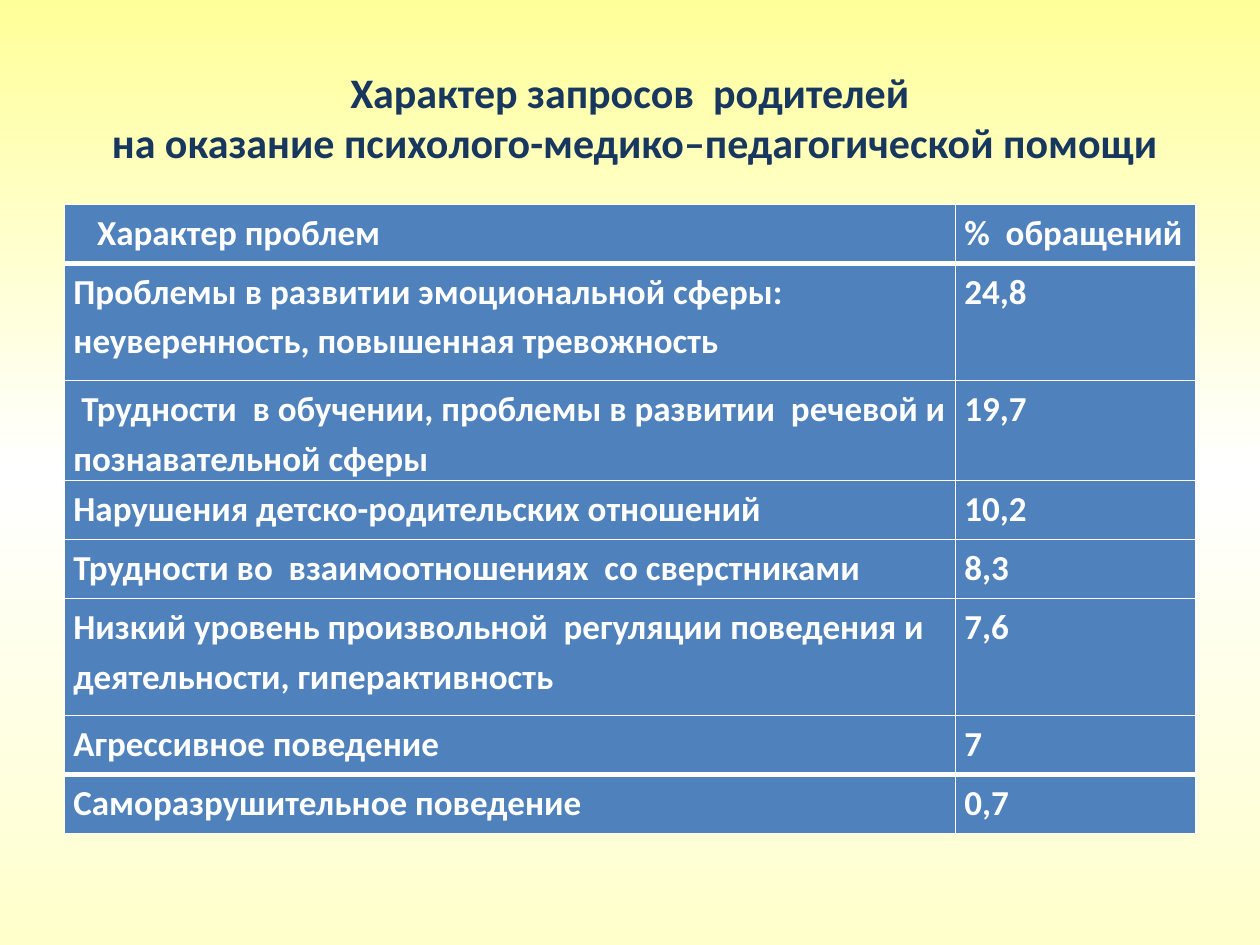
import copy
import lxml.etree
import pptx
import pptx.dml.color
import pptx.enum.text
import pptx.oxml.ns
import pptx.util

Cm, Pt = pptx.util.Cm, pptx.util.Pt
qn = pptx.oxml.ns.qn

HEADING = "Характер запросов  родителей\v на оказание психолого-медико–педагогической помощи"
COLUMNS = ("Характер проблем", "%  обращений")
REQUESTS = [
    ("Проблемы в развитии эмоциональной сферы: неуверенность, повышенная тревожность", "24,8"),
    (" Трудности  в обучении, проблемы в развитии  речевой и познавательной сферы", "19,7"),
    ("Нарушения детско-родительских отношений", "10,2"),
    ("Трудности во  взаимоотношениях  со сверстниками", "8,3"),
    ("Низкий уровень произвольной  регуляции поведения и  деятельности, гиперактивность", "7,6"),
    ("Агрессивное поведение", "7"),
    ("Саморазрушительное поведение", "0,7"),
]
TALL_ROWS = (1, 5)

THEME = {
    "font": "Calibri",
    "heading": "17375E",
    "cell": "4F81BD",
    "light": "FFFFFF",
    "backdrop": [(0, "FFFF99"), (0.5, "FFFFFF"), (1, "FFFFCC")],
    "heading_size": 24,
    "cell_size": 20,
    "thin": 1,
    "thick": 3,
}


def rgb(value):
    return pptx.dml.color.RGBColor.from_string(value)


def write_text(frame, text, size, color, align=None, spacing=None, before=None, indent=None):
    frame.word_wrap = True
    frame.text = text
    paragraph = frame.paragraphs[0]
    paragraph.alignment = align
    paragraph.line_spacing = spacing
    paragraph.space_before = before
    if indent is not None:
        paragraph._p.get_or_add_pPr().set("indent", str(indent))
    for run in paragraph.runs:
        run.font.name = THEME["font"]
        run.font.size = Pt(size)
        run.font.bold = True
        run.font.color.rgb = rgb(color)


def paint_backdrop(slide):
    fill = slide.background.fill
    fill.gradient()
    fill.gradient_angle = 270
    first = next(slide._element.iter(qn("a:gs")))
    first.addnext(copy.deepcopy(first))
    for stop, (position, color) in zip(fill.gradient_stops, THEME["backdrop"]):
        stop.position = position
        stop.color.rgb = rgb(color)


def draw_borders(cell, top, bottom):
    properties = cell._tc.get_or_add_tcPr()
    widths = {"lnL": THEME["thin"], "lnR": THEME["thin"], "lnT": top, "lnB": bottom}
    for side, width in widths.items():
        line = lxml.etree.SubElement(properties, qn("a:" + side), w=str(Pt(width)))
        solid = lxml.etree.SubElement(line, qn("a:solidFill"))
        lxml.etree.SubElement(solid, qn("a:srgbClr"), val=THEME["light"])


def add_requests(slide):
    rows = [COLUMNS] + REQUESTS
    heights = [Cm(2.36 if row in TALL_ROWS else 1.19) for row in range(len(rows))]
    widths = [Cm(17.96), Cm(4.85)]
    requests = slide.shapes.add_table(
        len(rows), len(COLUMNS), Cm(1.3), Cm(4.12), sum(widths), sum(heights)
    ).table
    for column, width in zip(requests.columns, widths):
        column.width = width
    thick_edges = (1, len(rows) - 1)
    for row, (values, height) in enumerate(zip(rows, heights)):
        requests.rows[row].height = height
        top, bottom = (
            THEME["thick" if edge in thick_edges else "thin"] for edge in (row, row + 1)
        )
        for column, value in enumerate(values):
            cell = requests.cell(row, column)
            cell.margin_left = cell.margin_right = Cm(0.18)
            cell.margin_top, cell.margin_bottom = Cm(0.03), 0
            write_text(
                cell.text_frame, value, THEME["cell_size"], THEME["light"],
                spacing=1.15, before=Pt(18),
                indent=Cm(0.48) if row == column == 0 else None,
            )
            draw_borders(cell, top, bottom)
            cell.fill.solid()
            cell.fill.fore_color.rgb = rgb(THEME["cell"])


def main():
    deck = pptx.Presentation()
    deck.slide_width, deck.slide_height = Cm(25.4), Cm(19.05)
    slide = deck.slides.add_slide(deck.slide_layouts[5])
    paint_backdrop(slide)
    heading = slide.shapes.title
    heading.left, heading.top = Cm(1.27), Cm(0.76)
    heading.width, heading.height = Cm(22.86), Cm(3.18)
    heading.text_frame.vertical_anchor = pptx.enum.text.MSO_ANCHOR.MIDDLE
    write_text(
        heading.text_frame, HEADING, THEME["heading_size"], THEME["heading"],
        align=pptx.enum.text.PP_ALIGN.CENTER,
    )
    add_requests(slide)
    deck.save("out.pptx")


if __name__ == "__main__":
    main()
